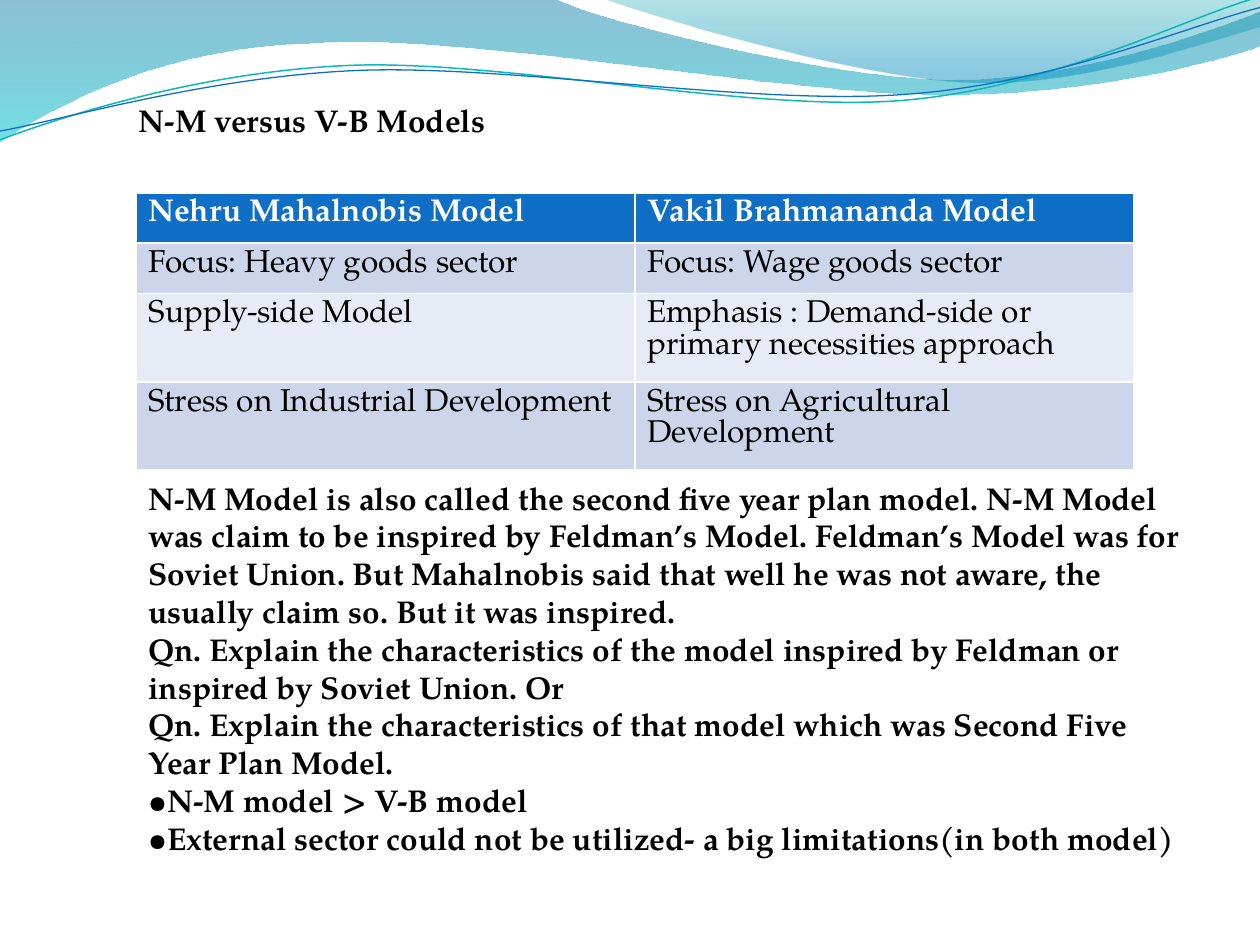
from lxml.etree import SubElement
from pptx import Presentation
from pptx.dml.color import RGBColor
from pptx.oxml.ns import qn
from pptx.util import Inches, Pt

WIDE, HIGH = 10, 7.5
FACE = "TeX Gyre Pagella"
HUES = {"ink": "000000", "white": "FFFFFF", "head": "0F6FC6", "odd": "CCD5EA",
        "even": "E7EBF5", "teal": "0AB8BF", "sea": "0074A1", "aqua": "00C6CF",
        "mint": "00A1A9", "sky": "008BBF"}

TITLE = ["N-M versus V-B Models"]
ROWS = [
    ("Nehru Mahalnobis Model", "Vakil Brahmananda Model"),
    ("Focus: Heavy goods sector", "Focus: Wage goods sector"),
    ("Supply-side Model", "Emphasis : Demand-side or primary necessities approach"),
    ("Stress on Industrial Development", "Stress on Agricultural Development"),
]
TALL = [0.4, 0.4, 0.7, 0.7]
NOTES = [
    "N-M Model is also called the second five year plan model. N-M Model was claim to be "
    "inspired by Feldman’s Model. Feldman’s Model was for Soviet Union. But Mahalnobis said "
    "that well he was not aware, the usually claim so. But it was inspired.",
    "Qn. Explain the characteristics of the model inspired by Feldman or inspired by "
    "Soviet Union. Or",
    "Qn. Explain the characteristics of that model which was Second Five Year Plan Model.",
    "•N-M model > V-B model",
    "•External sector could not be utilized- a big limitations(in both model)",
]

# Each path is a start point, then lines (2 numbers) and curves (6 numbers), in inches.
# Gradient stops are (position, hue, percent opaque).
BANDS = [
    ([(0, 0), (4.4, -0.01), (4.76, 0.17, 6.64, 0.63, 7.58, 0.63),
      (8.53, 0.63, 9.58, 0.26, 10, 0.09), (10.01, 0.36),
      (9.83, 0.44, 8.7, 0.76, 7.46, 0.75), (6.22, 0.75, 3.82, 0.28, 2.57, 0.34),
      (1.29, 0.36, 0.46, 0.83, -0.01, 1.13)],
     [(0, "sea", 45), (1, "aqua", 55)]),
    ([(4.79, -0.01), (5.09, 0.11, 6.82, 0.62, 7.69, 0.65),
      (8.56, 0.69, 9.61, 0.32, 10, 0.21), (10, 0)],
     [(0, "mint", 30), (0.8, "sky", 45)]),
]
WAVES = [
    ([(0, 1.11), (0.48, 0.93, 1.58, 0.57, 2.77, 0.52),
      (3.95, 0.47, 5.93, 0.89, 7.13, 0.8), (8.33, 0.71, 9.38, 0.15, 9.98, -0.02)],
     "teal", 0.85),
    ([(0, 1.04), (0.47, 0.96, 1.64, 0.61, 2.83, 0.56),
      (4.03, 0.51, 5.97, 0.84, 7.17, 0.75), (8.36, 0.67, 9.41, 0.21, 10, 0.06)],
     "head", 0.75),
]


def rgb(hue):
    return RGBColor.from_string(HUES[hue])


def outline(slide, path, close):
    """Draw through all points, then merge each curve's three lines into one Bezier."""
    dots = [(part[i] * 1000, part[i + 1] * 1000)
            for part in path for i in range(0, len(part), 2)]
    pen = slide.shapes.build_freeform(*dots[0], scale=Inches(1) / 1000)
    pen.add_line_segments(dots[1:], close=False)
    shape = pen.convert_to_shape()
    shape.shadow.inherit = False
    track = next(shape.element.iter(qn("a:path")))
    legs = iter(track.findall(qn("a:lnTo")))
    for part in path[1:]:
        leg = next(legs)
        if len(part) == 6:
            leg.tag = qn("a:cubicBezTo")
            for _ in range(2):
                rest = next(legs)
                leg.append(rest[0])
                track.remove(rest)
        track.append(leg)
    if close:
        SubElement(track, qn("a:close"))
    return shape


def band(slide, path, stops):
    shape = outline(slide, path, True)
    shape.line.fill.background()
    shape.fill.gradient()
    shape.fill.gradient_angle = 270
    for stop, (spot, hue, _) in zip(shape.fill.gradient_stops, stops):
        stop.position = spot
        stop.color.rgb = rgb(hue)
    tints = shape.element.spPr.iter(qn("a:srgbClr"))
    for tint, (_, _, part) in zip(tints, stops):
        SubElement(tint, qn("a:alpha"), val=str(part * 1000))


def wave(slide, path, hue, width):
    shape = outline(slide, path, False)
    shape.fill.background()
    shape.line.color.rgb = rgb(hue)
    shape.line.width = Pt(width)


def write(frame, lines, hue="ink", bold=True):
    look = {"name": FACE, "size": Pt(18), "bold": bold}
    frame.word_wrap = True
    for i, line in enumerate(lines):
        para = frame.add_paragraph() if i else frame.paragraphs[0]
        run = para.add_run()
        run.text = line
        for key, value in look.items():
            setattr(run.font, key, value)
        run.font.color.rgb = rgb(hue)


def text(slide, box, lines):
    write(slide.shapes.add_textbox(*map(Inches, box)).text_frame, lines)


def grid(slide, left, top, width):
    cols = len(ROWS[0])
    table = slide.shapes.add_table(len(ROWS), cols, *map(
        Inches, (left, top, width, sum(TALL)))).table
    for col in table.columns:
        col.width = Inches(width / cols)
    for r, (row, tall) in enumerate(zip(ROWS, TALL)):
        table.rows[r].height = Inches(tall)
        for c, words in enumerate(row):
            cell = table.cell(r, c)
            cell.fill.solid()
            cell.fill.fore_color.rgb = rgb("head" if r == 0 else "odd" if r % 2 else "even")
            write(cell.text_frame, [words], "ink" if r else "white", r == 0)


def main():
    deck = Presentation()
    deck.slide_width, deck.slide_height = Inches(WIDE), Inches(HIGH)
    slide = deck.slides.add_slide(deck.slide_layouts[6])
    for item in BANDS:
        band(slide, *item)
    for item in WAVES:
        wave(slide, *item)
    text(slide, (0.1 * WIDE, 0.1 * HIGH, 0.35 * WIDE, 0.71), TITLE)
    left = 1.08
    grid(slide, left, 1.53, 7.92)
    text(slide, (left, 0.5 * HIGH, 0.85 * WIDE, 3.74), NOTES)
    deck.save("out.pptx")


if __name__ == "__main__":
    main()
